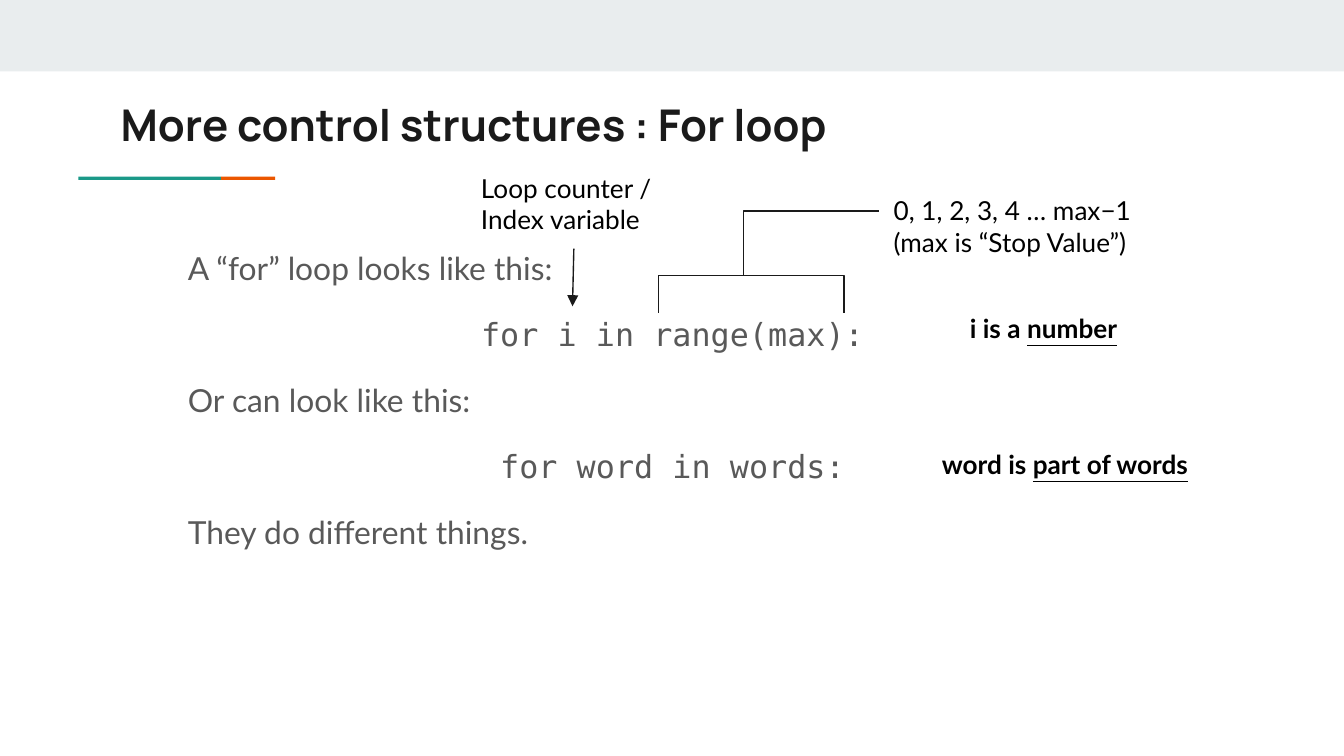
import pptx
import pptx.dml.color
import pptx.enum.shapes
import pptx.enum.text
import pptx.oxml
import pptx.oxml.ns
import pptx.util

Cm = pptx.util.Cm
Pt = pptx.util.Pt
ALIGN = pptx.enum.text.PP_ALIGN
ANCHOR = pptx.enum.text.MSO_ANCHOR
CONNECTOR = pptx.enum.shapes.MSO_CONNECTOR

INK, BLACK, GREY = "1A1A1A", "000000", "595959"
BAND, TEAL, ORANGE = "E9EDEE", "1A9988", "EB5600"


def color(value):
    return pptx.dml.color.RGBColor.from_string(value)


def add_xml(parent, tag, **attributes):
    child = pptx.oxml.parse_xml(f"<a:{tag} {pptx.oxml.ns.nsdecls('a')}/>")
    for name, value in attributes.items():
        child.set(name, value)
    parent.append(child)


class SlideBuilder:
    title_style = {"size": Pt(23.4), "name": "Manrope", "bold": True}
    body_style = {"size": Pt(17), "name": "Lato", "bold": False}
    code_style = {"size": Pt(17), "name": "DejaVu Sans Mono", "bold": False}
    note_style = {"size": Pt(14), "name": "Lato", "bold": False}
    strong_style = {"size": Pt(14), "name": "Lato", "bold": True}

    def __init__(self, page):
        self.page = page

    def frame(self, box, anchor=ANCHOR.TOP):
        text = box.text_frame
        values = {"word_wrap": True, "vertical_anchor": anchor,
                  "auto_size": pptx.enum.text.MSO_AUTO_SIZE.NONE}
        for side in ("left", "top", "right", "bottom"):
            values[f"margin_{side}"] = Cm(0.25)
        for name, value in values.items():
            setattr(text, name, value)
        return text

    def paragraph(self, text, index, **values):
        para = text.add_paragraph() if index else text.paragraphs[0]
        for name, value in values.items():
            setattr(para, name, value)
        return para

    def span(self, para, words, style, ink, underline=False):
        span = para.add_run()
        span.text = words
        for name, value in {**style, "underline": underline}.items():
            setattr(span.font, name, value)
        span.font.color.rgb = color(ink)

    def place(self, box, left, top, width, height):
        box.left, box.top = Cm(left), Cm(top)
        box.width, box.height = Cm(width), Cm(height)

    def title(self, words, *area):
        box = self.page.shapes.title
        self.place(box, *area)
        para = self.paragraph(self.frame(box, ANCHOR.MIDDLE), 0, alignment=ALIGN.LEFT)
        self.span(para, words, self.title_style, INK)

    def body(self, lines, *area):
        box = self.page.placeholders[1]
        self.place(box, *area)
        text = self.frame(box)
        for index, (words, is_code) in enumerate(lines):
            para = self.paragraph(
                text, index, line_spacing=1.15,
                alignment=ALIGN.CENTER if is_code else ALIGN.LEFT,
                space_before=Pt(12 if index else 0))
            # No bullet; sentences are indented, code is centred
            properties = para._p.get_or_add_pPr()
            properties.set("marL", str(0 if is_code else Cm(1.27)))
            properties.set("indent", "0")
            add_xml(properties, "buNone")
            self.span(para, words, self.code_style if is_code else self.body_style, GREY)

    def note(self, lines, *area):
        box = self.page.shapes.add_textbox(*map(Cm, area))
        text = self.frame(box)
        for index, words in enumerate(lines):
            self.span(self.paragraph(text, index), words, self.note_style, BLACK)
        return box

    def remark(self, lead, key, *area):
        box = self.page.shapes.add_textbox(*map(Cm, area))
        para = self.paragraph(self.frame(box), 0)
        self.span(para, lead, self.strong_style, BLACK)
        self.span(para, key, self.strong_style, BLACK, underline=True)

    def bar(self, fill, *area):
        bar = self.page.shapes.add_shape(
            pptx.enum.shapes.MSO_SHAPE.RECTANGLE, *map(Cm, area))
        bar.shadow.inherit = False
        bar.fill.solid()
        bar.fill.fore_color.rgb = color(fill)
        bar.line.fill.background()

    def connector(self, kind, start, end):
        line = self.page.shapes.add_connector(kind, *map(Cm, (*start, *end)))
        line.line.color.rgb = color(INK)
        line.line.width = Pt(0.75)
        add_xml(line._element.spPr, "effectLst")
        return line

    def elbow(self, start, end):
        """Runs level from start, then turns once towards end."""
        line = self.connector(CONNECTOR.ELBOW, start, end)
        guides = line._element.spPr.prstGeom.get_or_add_avLst()
        add_xml(guides, "gd", name="adj1", fmla="val 100000")

    def arrow(self, box, end):
        line = self.connector(CONNECTOR.STRAIGHT, end, end)
        line.begin_connect(box, 2)
        add_xml(line.line._get_or_add_ln(), "tailEnd", type="triangle")


def main():
    deck = pptx.Presentation()
    deck.slide_width, deck.slide_height = Cm(25.4), Cm(14.29)
    slide = SlideBuilder(deck.slides.add_slide(deck.slide_layouts[1]))

    # Header band and accent rule
    slide.bar(BAND, 0, 0, 25.4, 1.35)
    slide.bar(TEAL, 1.48, 3.34, 2.7, 0.06)
    slide.bar(ORANGE, 4.18, 3.34, 1.02, 0.06)

    # Title and body
    slide.title("More control structures : For loop", 2.03, 1.6, 21.36, 1.5)
    slide.body([
        ("A “for” loop looks like this:", False),
        ("for i in range(max):", True),
        ("Or can look like this:", False),
        ("for word in words:", True),
        ("They do different things.", False),
    ], 2.03, 4.34, 21.36, 7.72)

    # Bracket over range(max), with its explanation
    slide.note(["0, 1, 2, 3, 4 … max−1", "(max is “Stop Value”)"], 16.64, 3.43, 5.08, 1.7)
    bracket_middle = (14.05, 5.21)
    for foot in (12.45, 15.95):
        slide.elbow(bracket_middle, (foot, 5.92))
    slide.elbow((16.61, 3.99), bracket_middle)

    # Loop counter label, pointing at i
    counter = slide.note(["Loop counter /", "Index variable"], 8.84, 3, 4.01, 1.7)
    slide.arrow(counter, (10.82, 5.79))

    # Remarks beside the code
    slide.remark("i is a ", "number", 18.08, 5.66, 3.4, 1.12)
    slide.remark("word is ", "part of words", 17.55, 8.23, 5.66, 1.12)

    deck.save("out.pptx")


if __name__ == "__main__":
    main()
